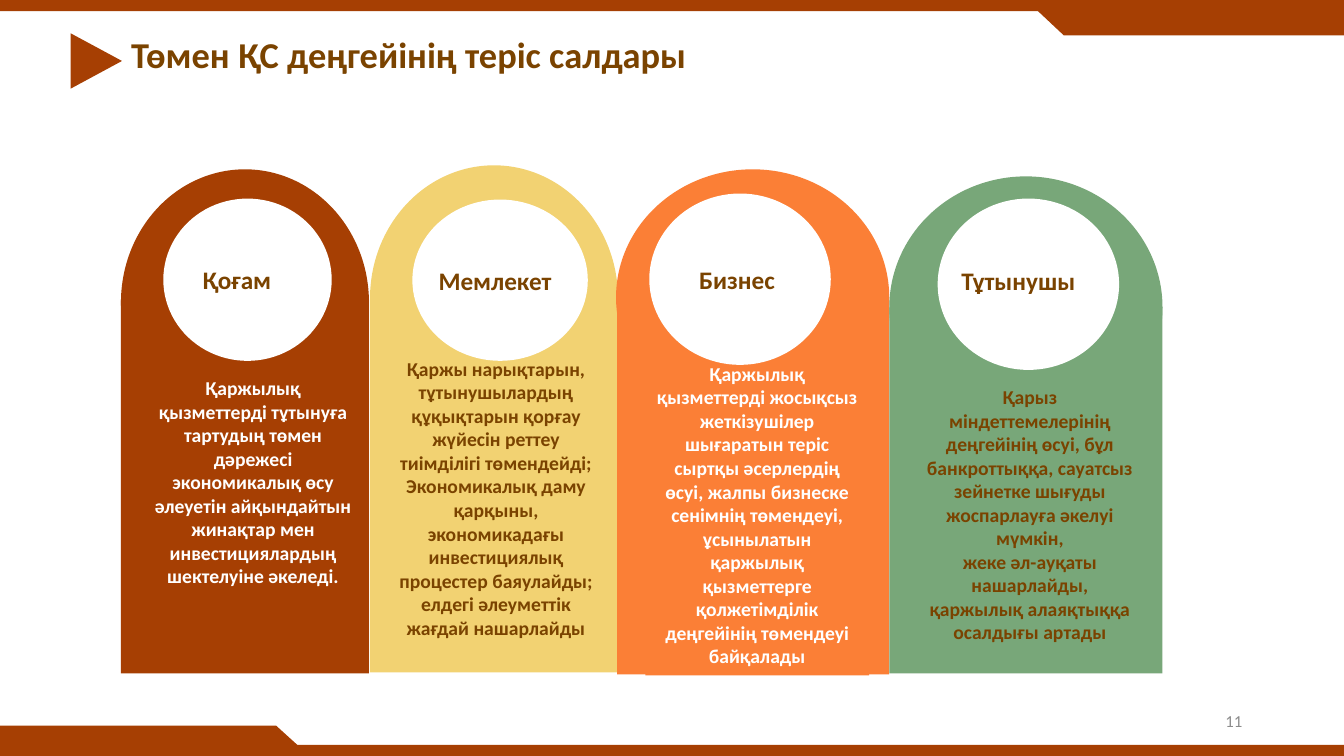
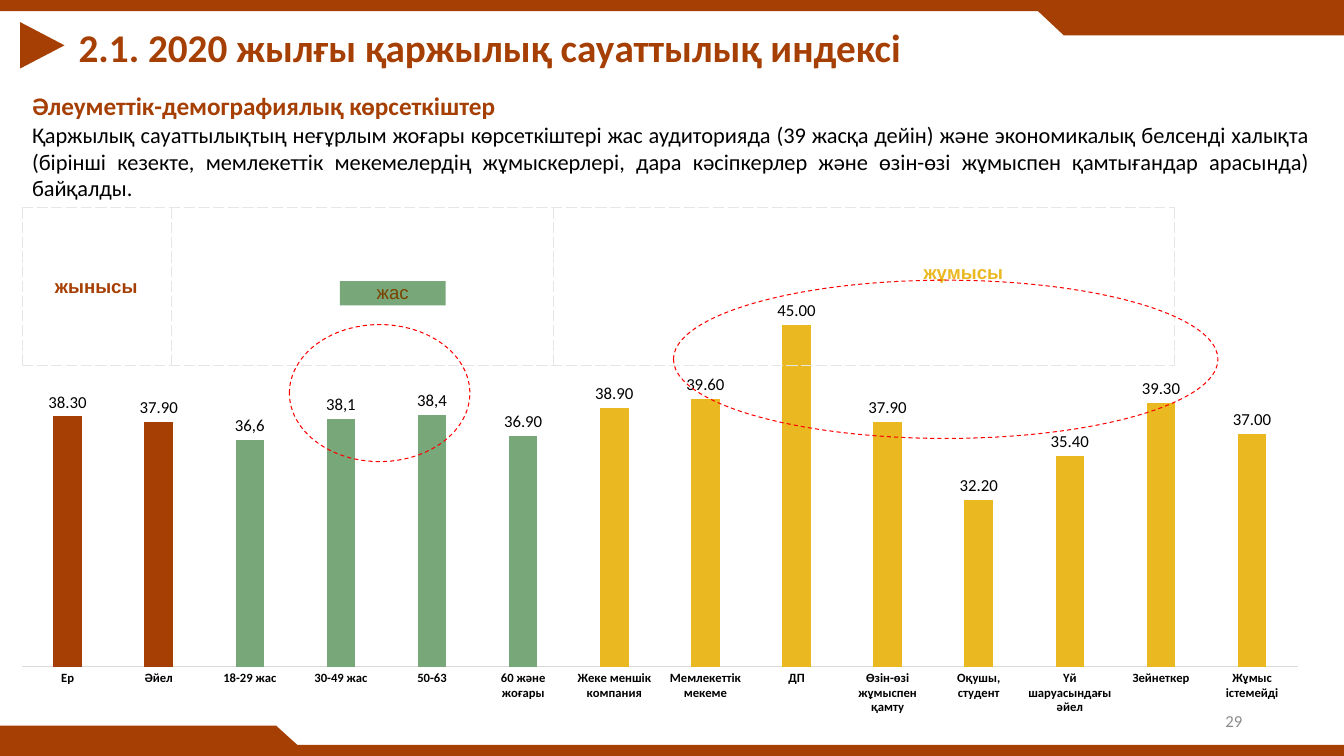
from lxml import etree
from pptx import Presentation
from pptx.chart.data import CategoryChartData
from pptx.dml.color import RGBColor
from pptx.enum.chart import XL_CHART_TYPE as CHART, XL_LABEL_POSITION as LABEL_POS
from pptx.enum.chart import XL_TICK_MARK as TICK
from pptx.enum.dml import MSO_LINE as DASH
from pptx.enum.shapes import MSO_SHAPE as SHAPE
from pptx.enum.text import MSO_ANCHOR as ANCHOR, MSO_AUTO_SIZE as AUTO, PP_ALIGN as ALIGN
from pptx.oxml import parse_xml
from pptx.oxml.ns import nsdecls, qn
from pptx.util import Pt

PX = 9144  # EMU per px, 100 px to the inch
WIDTH, HEIGHT = 1333, 750

RUST, BROWN, SAND = "A63F03", "7A4300", "F2D272"
ORANGE, GREEN, GOLD = "FB7F36", "78A779", "EAB821"
WHITE, BLACK, GREY, PALE, RED = "FFFFFF", "000000", "8C8C8C", "E7E6E6", "FF0000"

# name, fill, text colour, body, arch, circle, name box, text box, paragraphs
PILLARS = [
    ("Қоғам", RUST, WHITE, (120, 298, 246, 370), (120, 168, 246, 264),
     (162, 197, 167, 161), (153, 257, 164, 40), (140, 368, 222, 222),
     ["Қаржылық қызметтерді тұтынуға тартудың төмен дәрежесі экономикалық өсу "
      "әлеуетін айқындайтын жинақтар мен инвестициялардың шектелуіне әкеледі."]),
    ("Мемлекет", SAND, BROWN, (367, 297, 246, 370), (367, 164, 246, 264),
     (409, 198, 174, 160), (409, 258, 164, 40), (381, 349, 222, 293),
     ["Қаржы нарықтарын, тұтынушылардың құқықтарын қорғау жүйесін реттеу "
      "тиімділігі төмендейді; Экономикалық даму қарқыны, экономикадағы "
      "инвестициялық процестер баяулайды; елдегі әлеуметтік жағдай нашарлайды"]),
    ("Бизнес", ORANGE, WHITE, (612, 295, 270, 374), (611, 168, 271, 254),
     (644, 192, 180, 170), (649, 257, 164, 40), (640, 354, 222, 316),
     ["Қаржылық қызметтерді жосықсыз жеткізушілер шығаратын теріс сыртқы "
      "әсерлердің өсуі, жалпы бизнеске сенімнің төмендеуі, ұсынылатын қаржылық "
      "қызметтерге қолжетімділік деңгейінің төмендеуі байқалады"]),
    ("Тұтынушы", GREEN, BROWN, (882, 305, 271, 363), (882, 175, 271, 260),
     (930, 197, 180, 170), (928, 258, 164, 40), (905, 377, 233, 269),
     ["Қарыз міндеттемелерінің деңгейінің өсуі, бұл банкроттыққа, сауатсыз "
      "зейнетке шығуды жоспарлауға әкелуі мүмкін,",
      "жеке әл-ауқаты нашарлайды, қаржылық алаяқтыққа осалдығы артады"]),
]

# category, index, colour, own label text
INDEX_ROWS = [
    ("Ер", 38.3, RUST, None),
    ("Әйел", 37.9, RUST, None),
    ("18-29 жас", 36.6, GREEN, "36,6"),
    ("30-49 жас", 38.1, GREEN, "38,1"),
    ("50-63", 38.4, GREEN, "38,4"),
    ("60 және жоғары", 36.9, GREEN, None),
    ("Жеке меншік компания", 38.9, GOLD, None),
    ("Мемлекеттік мекеме", 39.6, GOLD, None),
    ("ДП", 45, GOLD, None),
    ("Өзін-өзі жұмыспен қамту", 37.9, GOLD, None),
    ("Оқушы, студент", 32.2, GOLD, None),
    ("Үй шаруасындағы әйел", 35.4, GOLD, None),
    ("Зейнеткер", 39.3, GOLD, None),
    ("Жұмыс істемейді", 37, GOLD, None),
]


def rgb(color):
    return RGBColor.from_string(color)


def emu(box):
    return [v * PX for v in box]


def set_font(font, size, color, bold=False, name="Calibri"):
    font.name, font.size, font.bold = name, Pt(size), bold
    font.color.rgb = rgb(color)


def add_para(tf, text, size, color, bold=False, align=ALIGN.LEFT, name="Calibri"):
    p = tf.add_paragraph() if tf.text else tf.paragraphs[0]
    p.text = text
    p.alignment = align
    set_font(p.font, size, color, bold, name)
    return p


def add_box(slide, box, fill=None, anchor=ANCHOR.TOP, inset=None):
    sp = slide.shapes.add_textbox(*emu(box))
    if fill:
        sp.fill.solid()
        sp.fill.fore_color.rgb = rgb(fill)
    tf = sp.text_frame
    tf.word_wrap = True
    tf.vertical_anchor = anchor
    if inset is not None:
        tf.margin_left = tf.margin_top = tf.margin_right = tf.margin_bottom = inset
    return tf


def paint(sp, fill):
    sp.shadow.inherit = False
    sp.fill.solid()
    sp.fill.fore_color.rgb = rgb(fill)
    sp.line.fill.background()
    return sp


def add_solid(slide, kind, box, fill):
    return paint(slide.shapes.add_shape(kind, *emu(box)), fill)


def add_dashed_oval(slide, box):
    sp = slide.shapes.add_shape(SHAPE.OVAL, *emu(box))
    sp.shadow.inherit = False
    sp.fill.background()
    sp.line.color.rgb = rgb(RED)
    sp.line.width = Pt(0.75)
    sp.line.dash_style = DASH.DASH


def add_bands(prs, slide):
    """Draw the bands and move them to the master, where all slides share them."""
    bands = [add_solid(slide, SHAPE.RECTANGLE, (0, y, WIDTH, 11), RUST)
             for y in (0, HEIGHT - 11)]
    outlines = [
        [(1022, 4), (WIDTH, 4), (WIDTH, 35), (1055, 35)],
        [(0, 720), (274, 720), (307, HEIGHT), (0, HEIGHT)],
    ]
    for start, *rest in outlines:
        builder = slide.shapes.build_freeform(*start, scale=PX)
        builder.add_line_segments(rest, close=True)
        bands.append(paint(builder.convert_to_shape(), RUST))
    for sp in bands:
        prs.slide_master.shapes.element.append(sp.element)


def set_title(slide, text, box, size, color, marker, anchor, align=ALIGN.LEFT):
    sp = slide.shapes.title
    sp.left, sp.top, sp.width, sp.height = emu(box)
    tf = sp.text_frame
    tf.word_wrap = True
    tf.auto_size = AUTO.NONE
    tf.vertical_anchor = anchor
    p = add_para(tf, text, size, color, True, align)
    add_solid(slide, SHAPE.ISOSCELES_TRIANGLE, marker, RUST).rotation = 90
    return p


def add_page_number(slide, number):
    tf = add_box(slide, (942, 695, 300, 40), anchor=ANCHOR.MIDDLE)
    add_para(tf, number, 12, GREY, align=ALIGN.RIGHT)


def add_pillar(slide, name, fill, color, body, arch, circle, name_box, text_box, texts):
    add_solid(slide, SHAPE.RECTANGLE, body, fill)
    add_solid(slide, SHAPE.OVAL, arch, fill)
    tf = add_box(slide, text_box, fill)
    for text in texts:
        add_para(tf, text, 14, color, True, ALIGN.CENTER)
    add_solid(slide, SHAPE.OVAL, circle, WHITE)
    add_para(add_box(slide, name_box), name, 18, BROWN, True, ALIGN.CENTER)


def set_plot_area(chart, x, y, w, h):
    area = chart.element.xpath(".//c:plotArea")[0]
    for old in area.findall(qn("c:layout")):
        area.remove(old)
    sizes = "".join(f'<c:{tag} val="{v}"/>' for tag, v in zip("xywh", (x, y, w, h)))
    area.insert(0, parse_xml(
        f'<c:layout {nsdecls("c")}><c:manualLayout><c:layoutTarget val="inner"/>'
        f'<c:xMode val="edge"/><c:yMode val="edge"/>{sizes}'
        '</c:manualLayout></c:layout>'))


def add_index_chart(slide, box):
    data = CategoryChartData(number_format="###0.00")
    data.categories = [row[0] for row in INDEX_ROWS]
    data.add_series("Series 1", [row[1] for row in INDEX_ROWS])
    chart = slide.shapes.add_chart(CHART.COLUMN_CLUSTERED, *emu(box), data).chart
    chart.has_title = chart.has_legend = False
    set_font(chart.font, 10, BLACK)
    set_plot_area(chart, 0.016, 0.108, 0.968, 0.709)

    # Axes
    values, cats = chart.value_axis, chart.category_axis
    values.minimum_scale, values.maximum_scale = 20, 50
    values.has_major_gridlines = False
    values.visible = False
    cats.major_tick_mark = TICK.NONE
    cats.format.line.color.rgb = rgb("D9D9D9")
    cats.format.line.width = Pt(0.75)
    set_font(cats.tick_labels.font, 9, BLACK, True)

    # Columns and their labels
    plot = chart.plots[0]
    plot.gap_width, plot.overlap = 219, -27
    plot.vary_by_categories = False
    series = plot.series[0]
    series.format.fill.solid()
    series.format.fill.fore_color.rgb = rgb(RUST)
    labels = series.data_labels
    labels.show_value = True
    labels.number_format, labels.number_format_is_linked = "###0.00", False
    labels.position = LABEL_POS.OUTSIDE_END
    set_font(labels.font, 12, BLACK)
    for i, (_, _, color, text) in enumerate(INDEX_ROWS):
        point = series.points[i]
        point.format.fill.solid()
        point.format.fill.fore_color.rgb = rgb(color)
        if text:
            r = point.data_label.text_frame.paragraphs[0].add_run()
            r.text = text
            set_font(r.font, 12, BLACK)
            point.data_label.position = LABEL_POS.OUTSIDE_END


def set_borders(cell, color, width):
    tc_pr = cell._tc.get_or_add_tcPr()
    for side in "LRTB":
        ln = etree.SubElement(tc_pr, qn(f"a:ln{side}"), w=str(Pt(width)))
        fill = etree.SubElement(ln, qn("a:solidFill"))
        etree.SubElement(fill, qn("a:srgbClr"), val=color)
        etree.SubElement(ln, qn("a:prstDash"), val="sysDash")


def add_group_frame(slide, left, top, widths, height):
    box = (left, top, sum(widths), height)
    table = slide.shapes.add_table(1, len(widths), *emu(box)).table
    table.first_row = table.horz_banding = False
    for i, width in enumerate(widths):
        table.columns[i].width = width * PX
        set_borders(table.cell(0, i), PALE, 0.5)
        table.cell(0, i).fill.background()


def build_effects(slide):
    set_title(slide, "Төмен ҚС деңгейінің теріс салдары", (120, 27, 924, 54), 26, BROWN,
              (68, 35, 55, 51), ANCHOR.TOP, ALIGN.JUSTIFY)
    for pillar in PILLARS:
        add_pillar(slide, *pillar)
    add_page_number(slide, "11")


def build_index(slide):
    add_page_number(slide, "29")
    add_index_chart(slide, (1, 192, 1307, 575))
    add_group_frame(slide, 22, 206, (148, 379, 616), 156)

    # Group names and highlights
    groups = [
        ("жынысы", (43, 273, 105, 19), None, RUST, True, ALIGN.CENTER),
        ("жас", (337, 279, 105, 24), GREEN, BROWN, False, ALIGN.CENTER),
        ("жұмысы", (916, 259, 105, 19), None, GOLD, True, ALIGN.LEFT),
    ]
    for text, box, fill, color, bold, align in groups:
        add_para(add_box(slide, box, fill, inset=0), text, 13.3, color, bold, align, "Arial")
    for box in ((668, 278, 540, 157), (287, 322, 179, 136)):
        add_dashed_oval(slide, box)

    # Introduction
    tf = add_box(slide, (22, 85, 1287, 121))
    add_para(tf, "Әлеуметтік-демографиялық көрсеткіштер", 18, RUST, True, ALIGN.JUSTIFY)
    add_para(tf, "Қаржылық сауаттылықтың неғұрлым жоғары көрсеткіштері жас аудиторияда "
             "(39 жасқа дейін) және экономикалық белсенді халықта (бірінші кезекте, "
             "мемлекеттік мекемелердің жұмыскерлері, дара кәсіпкерлер және өзін-өзі "
             "жұмыспен қамтығандар арасында) байқалды.", 16, BLACK, align=ALIGN.JUSTIFY)

    p = set_title(slide, "2.1. 2020 жылғы қаржылық сауаттылық индексі", (68, 12, 1084, 74),
                  28, RUST, (19, 23, 46, 44), ANCHOR.MIDDLE)
    p.line_spacing = 0.9


def main():
    prs = Presentation()
    prs.slide_width, prs.slide_height = WIDTH * PX, HEIGHT * PX
    title_only = prs.slide_layouts[5]
    slides = [prs.slides.add_slide(title_only) for _ in range(2)]
    add_bands(prs, slides[0])
    build_effects(slides[0])
    build_index(slides[1])
    prs.save("out.pptx")


if __name__ == "__main__":
    main()
